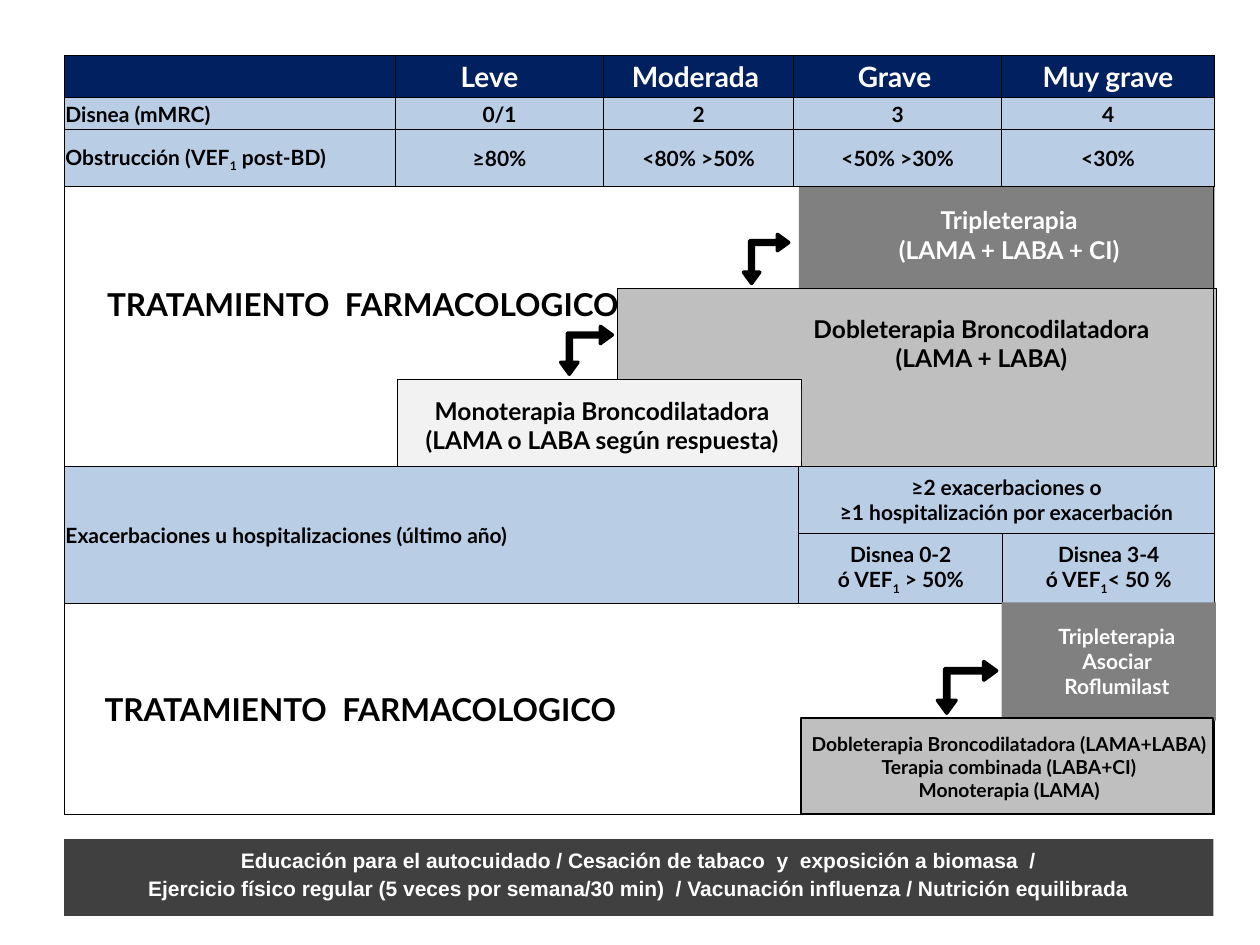
from dataclasses import dataclass
from typing import Optional

from lxml import etree
from pptx import Presentation
from pptx.dml.color import RGBColor
from pptx.enum import shapes, text
from pptx.oxml.ns import qn
from pptx.util import Inches, Pt

NAVY, BLUE, BLACK, WHITE = "002060", "B9CDE5", "000000", "FFFFFF"
DARK, GREY, SILVER, PALE = "404040", "808080", "BFBFBF", "F2F2F2"
CENTER, LEFT = text.PP_ALIGN.CENTER, text.PP_ALIGN.LEFT
TREATMENT = "TRATAMIENTO  FARMACOLOGICO"


@dataclass
class Label:
    """Paragraphs are split by newlines; _x_ marks a subscript."""
    text: str
    size: float = 12
    color: str = BLACK
    align: int = CENTER
    font: str = "Lato"
    indent: float = 0  # inches added to the left margin
    tail: float = 0  # inches added to the right margin
    middle: bool = False


@dataclass
class Box:
    """Place and size in percent of the slide's width and height."""
    x: float
    y: float
    w: float
    h: float
    fill: Optional[str] = None
    line: float = 0
    label: Optional[Label] = None


@dataclass
class Cell:
    row: int
    col: int
    label: Optional[Label] = None
    fill: str = BLUE
    rows: int = 1
    cols: int = 1


prs = Presentation()
prs.slide_width, prs.slide_height = Inches(10), Inches(7.5)
slide = prs.slides.add_slide(prs.slide_layouts[6])


def px(share: float) -> int:
    return round(prs.slide_width * share / 100)


def py(share: float) -> int:
    return round(prs.slide_height * share / 100)


def rgb(color: str) -> RGBColor:
    return RGBColor.from_string(color)


def write(tf, label: Label) -> None:
    for i, row in enumerate(label.text.split("\n")):
        p = tf.paragraphs[0] if i == 0 else tf.add_paragraph()
        p.alignment = label.align
        p.font.size, p.font.bold, p.font.name = Pt(label.size), True, label.font
        p.font.color.rgb = rgb(label.color)
        for k, part in enumerate(row.split("_")):
            r = p.add_run()
            r.text = part
            if k % 2:
                r.font._element.set("baseline", "-25000")


def draw_box(box: Box, kind=shapes.MSO_SHAPE.RECTANGLE):
    area = px(box.x), py(box.y), px(box.w), py(box.h)
    if box.fill or box.line:
        sp = slide.shapes.add_shape(kind, *area)
        sp.shadow.inherit = False
        if box.fill:
            sp.fill.solid()
            sp.fill.fore_color.rgb = rgb(box.fill)
        else:
            sp.fill.background()
        if box.line:
            sp.line.color.rgb = rgb(BLACK)
            sp.line.width = Pt(box.line)
        else:
            sp.line.fill.background()
    else:
        sp = slide.shapes.add_textbox(*area)
    if box.label:
        tf = sp.text_frame
        tf.word_wrap = True
        tf.vertical_anchor = (text.MSO_ANCHOR.MIDDLE if box.label.middle
                              else text.MSO_ANCHOR.TOP)
        tf.margin_left = Inches(0.1 + box.label.indent)
        write(tf, box.label)
    return sp


def draw_arrow(x: float, y: float, w: float, h: float) -> None:
    sp = draw_box(Box(x, y, w, h, BLACK, 2), shapes.MSO_SHAPE.LEFT_UP_ARROW)
    sp.rotation = 180
    for i, value in enumerate((0.08, 0.18, 0.25)):
        sp.adjustments[i] = value


def add_borders(cell) -> None:
    tc_pr = cell._tc.get_or_add_tcPr()
    for i, side in enumerate(("lnL", "lnR", "lnT", "lnB")):
        ln = etree.Element(qn(f"a:{side}"), w=str(Pt(0.5)))
        fill = etree.SubElement(ln, qn("a:solidFill"))
        etree.SubElement(fill, qn("a:srgbClr"), val=BLACK)
        tc_pr.insert(i, ln)


def draw_table(x: float, y: float, cols: list[float], rows: list[float],
               cells: list[Cell]) -> None:
    frame = slide.shapes.add_table(len(rows), len(cols), px(x), py(y),
                                   px(sum(cols)), py(sum(rows)))
    table = frame.table
    for column, w in zip(table.columns, cols):
        column.width = px(w)
    for row, h in zip(table.rows, rows):
        row.height = py(h)
    for item in cells:
        cell = table.cell(item.row, item.col)
        if item.rows * item.cols > 1:
            cell.merge(table.cell(item.row + item.rows - 1,
                                  item.col + item.cols - 1))
        cell.vertical_anchor = text.MSO_ANCHOR.MIDDLE
        cell.margin_left = cell.margin_right = cell.margin_top = Inches(0.01)
        cell.margin_bottom = 0
        if item.label:
            cell.margin_left = Inches(0.01 + item.label.indent)
            cell.margin_right = Inches(0.01 + item.label.tail)
            write(cell.text_frame, item.label)
    for item in cells:
        for r in range(item.row, item.row + item.rows):
            for c in range(item.col, item.col + item.cols):
                cell = table.cell(r, c)
                cell.fill.solid()
                cell.fill.fore_color.rgb = rgb(item.fill)
                add_borders(cell)


def severity_cells() -> list[Cell]:
    cells = [Cell(0, 0, fill=NAVY)]
    for c, (name, tail) in enumerate([("Leve", 0.16), ("Moderada", 0.05),
                                      ("Grave", 0.05), ("Muy grave", 0)], 1):
        cells.append(Cell(0, c, Label(name, 16, WHITE, tail=tail), NAVY))
    body = [["Disnea (mMRC)", "0/1", "2", "3", "4"],
            ["Obstrucción (VEF_1_ post-BD)", "≥80%", "<80% >50%", "<50% >30%", "<30%"]]
    for r, values in enumerate(body, 1):
        for c, value in enumerate(values):
            cells.append(Cell(r, c, Label(value, align=CENTER if c else LEFT)))
    return cells


def main() -> None:
    left, width = 5.1, 91.2
    draw_box(Box(63.4, 19.73, 33, 11.6, GREY))
    draw_box(Box(left, 17.33, 56.6, 29.6, WHITE,
                 label=Label(TREATMENT, 18, align=LEFT, indent=0.24, middle=True)))
    draw_table(left, 5.87, [26.3, 16.5, 15.1, 16.5, 16.9], [4.4, 3.47, 6], severity_cells())

    for box in (
        Box(49, 30.53, 47.5, 18.8, SILVER, 0.25),
        Box(31.5, 40.13, 32.1, 9.2, PALE, 0.25),
        Box(32, 41.2, 31.6, 7.6, PALE, label=Label(
            "Monoterapia Broncodilatadora\n(LAMA o LABA según respuesta)", 14)),
        Box(59.7, 32.53, 36.4, 7.6, label=Label(
            "Dobleterapia Broncodilatadora\n(LAMA + LABA)", 14)),
        Box(65.9, 21.07, 28.4, 7.6, label=Label(
            "Tripleterapia\n(LAMA + LABA + CI)", 14, WHITE)),
    ):
        draw_box(box)

    draw_table(left, 49.33, [58.3, 16.2, 16.8], [7.07, 7.47, 22.27], [
        Cell(0, 0, Label("Exacerbaciones u hospitalizaciones (último año)", align=LEFT), rows=2),
        Cell(0, 1, Label("≥2 exacerbaciones o\n≥1 hospitalización por exacerbación"), cols=2),
        Cell(1, 1, Label("Disnea 0-2\nó VEF_1_ > 50%")),
        Cell(1, 2, Label("Disnea 3-4\nó VEF_1_< 50 %")),
        Cell(2, 0, Label(TREATMENT, 18, align=LEFT, indent=0.31), WHITE, cols=3),
    ])
    draw_box(Box(left, 19.73, width, 29.6, line=0.5))

    divider = slide.shapes.add_connector(shapes.MSO_CONNECTOR.STRAIGHT,
                                         px(85.2), py(65.2), px(85.2), py(76.8))
    divider.line.color.rgb = rgb(BLACK)
    divider.line.width = Pt(0.75)
    etree.SubElement(divider._element.spPr, qn("a:effectLst"))

    draw_box(Box(79.5, 63.73, 17, 12.53, GREY))
    draw_box(Box(81.3, 65.33, 14.7, 9.47, GREY,
                 label=Label("Tripleterapia\nAsociar Roflumilast", 12, WHITE)))
    footer = draw_box(Box(left, 88.8, width, 8.13, DARK, label=Label(
        "Educación para el autocuidado / Cesación de tabaco  y  exposición a biomasa  /\n"
        "Ejercicio físico regular (5 veces por semana/30 min)  / Vacunación influenza"
        " / Nutrición equilibrada", 12, WHITE, font="Arial", middle=True)))
    for p in footer.text_frame.paragraphs:
        p.line_spacing, p.space_before = Pt(10), Pt(6)
    draw_box(Box(63.6, 76, 32.7, 10.13, SILVER, 1))
    draw_box(Box(61.1, 76.8, 38, 10.27, label=Label(
        "Dobleterapia Broncodilatadora (LAMA+LABA)\nTerapia combinada (LABA+CI)\n"
        "Monoterapia (LAMA)", 11)))

    for arrow in ((44.5, 34.53, 4.1, 5.07), (59, 24.8, 3.6, 5.2), (74.4, 70, 4.7, 5.47)):
        draw_arrow(*arrow)
    prs.save("out.pptx")


if __name__ == "__main__":
    main()
